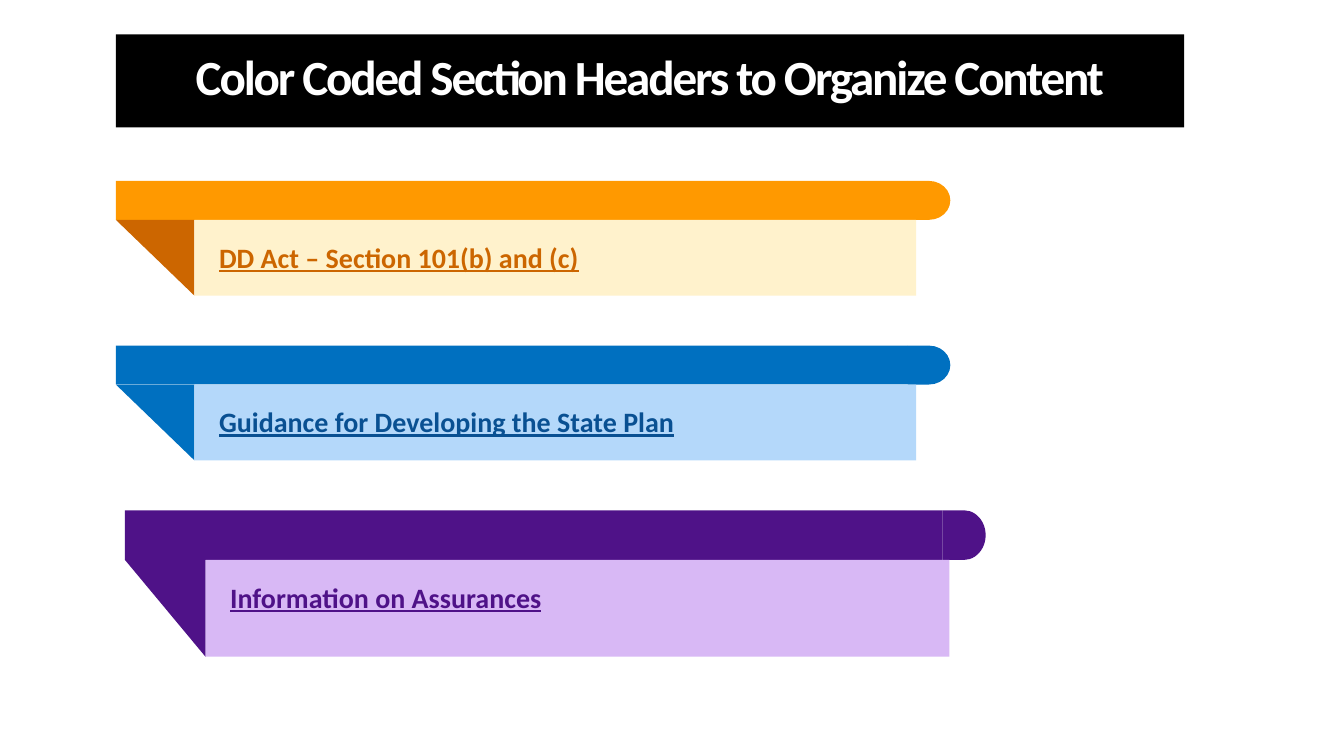
from dataclasses import dataclass

from pptx import Presentation
from pptx.dml.color import RGBColor
from pptx.enum.shapes import MSO_SHAPE
from pptx.enum.text import MSO_ANCHOR, PP_ALIGN
from pptx.util import Cm, Pt

RECTANGLE = MSO_SHAPE.RECTANGLE
TRIANGLE = MSO_SHAPE.RIGHT_TRIANGLE
DELAY = MSO_SHAPE.FLOWCHART_DELAY
CENTER, LEFT = PP_ALIGN.CENTER, PP_ALIGN.LEFT
MIDDLE, TOP = MSO_ANCHOR.MIDDLE, MSO_ANCHOR.TOP


@dataclass(frozen=True)
class Theme:
    font: str = "Calibri"
    title_size: float = 35.1
    label_size: float = 20
    title_fill: str = "000000"
    title_text: str = "FFFFFF"


@dataclass(frozen=True)
class Palette:
    bar: str
    fold: str
    panel: str
    text: str


@dataclass(frozen=True)
class Size:
    bar_width: float
    bar_height: float
    cap_width: float
    fold_width: float
    panel_width: float
    panel_height: float


THEME = Theme()
ORANGE = Palette("FF9900", "CC6600", "FFF2CC", "CC6600")
BLUE = Palette("0070C0", "0070C0", "B4D8FA", "095092")
PURPLE = Palette("4F1288", "4F1288", "D8B8F5", "4F1288")
REGULAR = Size(19.96, 0.98, 1.07, 1.98, 18.19, 1.91)
LARGE = Size(20.6, 1.25, 1.09, 2.03, 18.75, 2.44)

TITLE = "Color Coded Section Headers to Organize Content"
TITLE_BOX = (2.92, 0.87, 26.92, 2.34)
SECTIONS = [
    ("DD Act – Section 101(b) and (c)", 2.92, 4.56, REGULAR, ORANGE),
    ("Guidance for Developing the State Plan", 2.92, 8.71, REGULAR, BLUE),
    ("Information on Assurances", 3.15, 12.86, LARGE, PURPLE),
]


def add_block(shapes, kind, box, color):
    shape = shapes.add_shape(kind, *(Cm(length) for length in box))
    shape.shadow.inherit = False
    shape.fill.solid()
    shape.fill.fore_color.rgb = RGBColor.from_string(color)
    shape.line.fill.background()
    return shape


def write_text(shape, text, size, color, align, anchor, spacing):
    frame = shape.text_frame
    frame.text = text
    frame.word_wrap = True
    frame.vertical_anchor = anchor
    paragraph = frame.paragraphs[0]
    paragraph.alignment = align
    paragraph.line_spacing = spacing
    run = paragraph.runs[0]
    run.font.name = THEME.font
    run.font.size = Pt(size)
    run.font.bold = True
    run.font.color.rgb = RGBColor.from_string(color)
    return run


def add_title(slide):
    shape = add_block(slide.shapes, RECTANGLE, TITLE_BOX, THEME.title_fill)
    run = write_text(shape, TITLE, THEME.title_size, THEME.title_text, CENTER, MIDDLE, 0.85)
    run._r.get_or_add_rPr().set("spc", "-150")


def add_section(slide, label, left, top, size, palette):
    shapes = slide.shapes.add_group_shape().shapes
    below = top + size.bar_height
    bar_end = left + size.bar_width
    panel_left = left + size.fold_width
    add_block(shapes, RECTANGLE, (left, top, size.bar_width, size.bar_height), palette.bar)
    fold = add_block(shapes, TRIANGLE, (left, below, size.fold_width, size.panel_height), palette.fold)
    fold.rotation = 180
    add_block(shapes, DELAY, (bar_end, top, size.cap_width, size.bar_height), palette.bar)
    panel = add_block(shapes, RECTANGLE, (panel_left, below, size.panel_width, size.panel_height), palette.panel)
    run = write_text(panel, label, THEME.label_size, palette.text, LEFT, TOP, 1.07)
    run.font.underline = True
    panel.text_frame.margin_left = Cm(0.62)
    panel.text_frame.margin_top = Cm(0.45)


def main():
    presentation = Presentation()
    presentation.slide_width = Cm(33.87)
    presentation.slide_height = Cm(19.05)
    slide = presentation.slides.add_slide(presentation.slide_layouts[6])
    add_title(slide)
    for section in SECTIONS:
        add_section(slide, *section)
    presentation.save("out.pptx")


if __name__ == "__main__":
    main()
